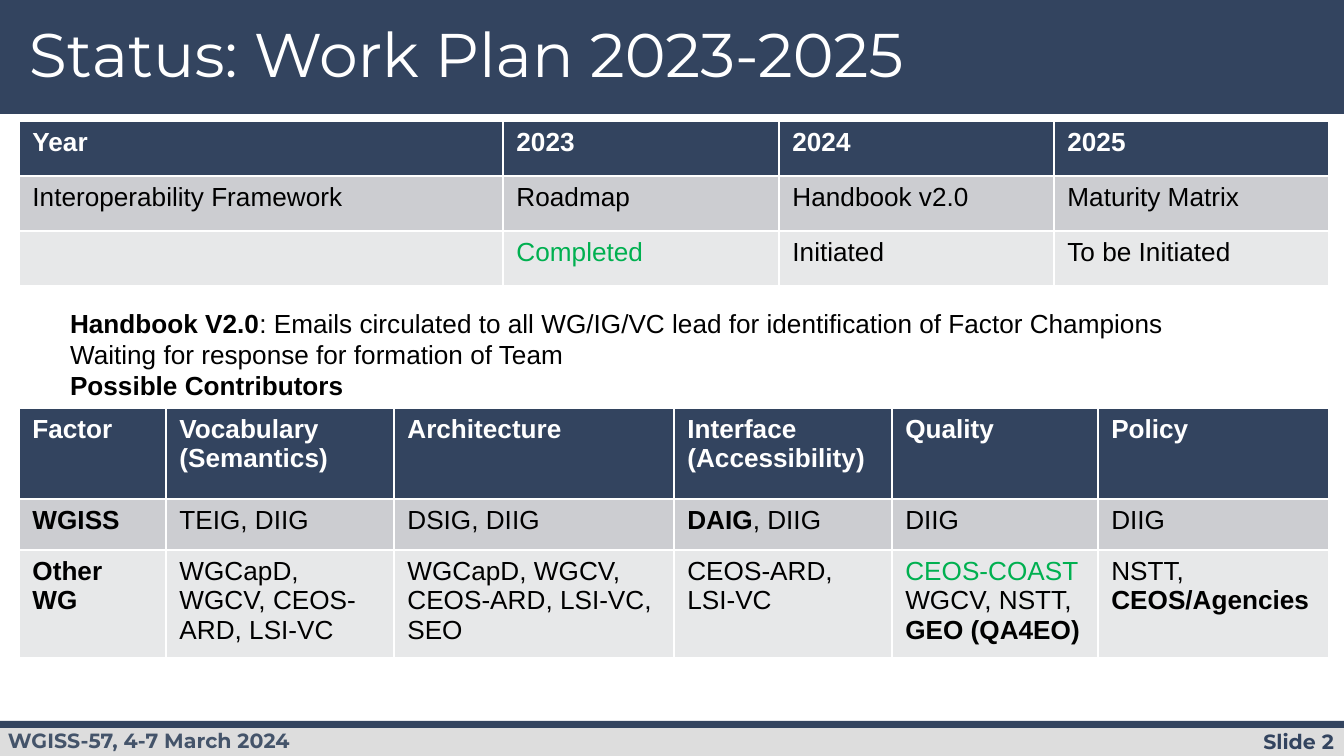
from pptx import Presentation
from pptx.dml.color import RGBColor
from pptx.enum.shapes import MSO_SHAPE
from pptx.enum.text import MSO_ANCHOR, PP_ALIGN
from pptx.util import Emu, Pt

RECTANGLE = MSO_SHAPE.RECTANGLE
TOP = MSO_ANCHOR.TOP
LEFT, RIGHT = PP_ALIGN.LEFT, PP_ALIGN.RIGHT

NAVY = RGBColor(0x33, 0x44, 0x5F)
SLATE = RGBColor(0x44, 0x54, 0x6A)
FOOTER_GREY = RGBColor(0xDD, 0xDD, 0xDD)
BAND_DARK = RGBColor(0xCC, 0xCD, 0xD1)
BAND_LIGHT = RGBColor(0xE7, 0xE8, 0xE9)
GREEN = RGBColor(0x00, 0xB0, 0x50)
WHITE = RGBColor(0xFF, 0xFF, 0xFF)
BLACK = RGBColor(0x00, 0x00, 0x00)

WIDTH, HEIGHT = 1344, 756
HEADING_FONT, BODY_FONT = "Montserrat", "Arial"
HIGHLIGHTS = ("Completed", "CEOS-COAST")

YEAR_ROWS = [
    ["Year", "2023", "2024", "2025"],
    ["Interoperability Framework", "Roadmap", "Handbook v2.0", "Maturity Matrix"],
    ["", "Completed", "Initiated", "To be Initiated"],
]
FACTOR_ROWS = [
    ["Factor", "Vocabulary (Semantics)", "Architecture",
     "Interface (Accessibility)", "Quality", "Policy"],
    ["*WGISS*", "TEIG, DIIG", "DSIG, DIIG", "*DAIG*, DIIG", "DIIG", "DIIG"],
    ["*Other WG*", "WGCapD, WGCV, CEOS-ARD, LSI-VC",
     "WGCapD, WGCV, CEOS-ARD, LSI-VC, SEO", "CEOS-ARD, LSI-VC",
     "CEOS-COAST\nWGCV, NSTT, *GEO (QA4EO)*", "NSTT, *CEOS/Agencies*"],
]
HANDBOOK_NOTES = (
    "*Handbook V2.0*: Emails circulated to all WG/IG/VC lead for "
    "identification of Factor Champions\n"
    "Waiting for response for formation of Team\n"
    "*Possible Contributors*"
)


def px(length):
    """Turn pixels into EMU."""
    return Emu(round(length * 914400 / 134.4))


def set_font(font, name, size, color, bold=False):
    """Format a font."""
    font.name, font.size, font.bold = name, Pt(size), bold
    font.color.rgb = color


def set_insets(frame, horizontal, vertical):
    """Set the inner margins of a text frame."""
    frame.margin_left = frame.margin_right = px(horizontal)
    frame.margin_top = frame.margin_bottom = px(vertical)


def write_body(frame, text, color=BLACK, bold=False):
    """Write lines of body text, with words between asterisks in bold."""
    for index, line in enumerate(text.split("\n")):
        paragraph = frame.paragraphs[0] if index == 0 else frame.add_paragraph()
        line_color = GREEN if line in HIGHLIGHTS else color
        set_font(paragraph.font, BODY_FONT, 14, line_color, bold)
        for part, words in enumerate(line.split("*")):
            if words:
                run = paragraph.add_run()
                run.text = words
                if part % 2:
                    run.font.bold = True


def add_bar(slide, box, color):
    """Add a plain filled bar behind the other shapes."""
    bar = slide.shapes.add_shape(RECTANGLE, *map(px, box))
    bar.shadow.inherit = False
    bar.fill.solid()
    bar.fill.fore_color.rgb = color
    bar.line.fill.background()
    return bar


def add_text_box(slide, box, insets):
    """Add a wrapping text box and return its text frame."""
    frame = slide.shapes.add_textbox(*map(px, box)).text_frame
    frame.word_wrap = True
    set_insets(frame, *insets)
    return frame


def add_header(slide, box):
    """Add the title band and place the title in it."""
    left, top, width, height = box
    bar = add_bar(slide, box, NAVY)
    title = slide.shapes.title
    bar._element.addnext(title._element)
    title.left, title.top = px(left + 19), px(top + 19)
    title.width, title.height = px(width - 309), px(height - 28)
    frame = title.text_frame
    frame.text = "Status: Work Plan 2023-2025"
    frame.vertical_anchor = TOP
    set_insets(frame, 10, 5)
    paragraph = frame.paragraphs[0]
    paragraph.alignment = LEFT
    paragraph.line_spacing = 0.9
    set_font(paragraph.font, HEADING_FONT, 33, WHITE)


def add_footer(slide, box):
    """Add the footer bar with the meeting name and slide number."""
    left, top, width, height = box
    add_bar(slide, box, FOOTER_GREY)
    add_bar(slide, (left, top - 4, width, 7), NAVY)
    labels = [
        ("WGISS-57, 4-7 March 2024", (left - 5, top - 9, 425, 52), (13, 13), SLATE, LEFT),
        ("Slide 2", (left + width - 212, top - 1, 212, 35), (10, 5), NAVY, RIGHT),
    ]
    for text, label_box, insets, color, alignment in labels:
        frame = add_text_box(slide, label_box, insets)
        paragraph = frame.paragraphs[0]
        paragraph.text = text
        paragraph.alignment = alignment
        set_font(paragraph.font, HEADING_FONT, 11, color, True)


def add_plan_table(slide, origin, column_widths, row_heights, rows):
    """Add a table with a navy header row and grey body rows."""
    size = sum(column_widths), sum(row_heights)
    table = slide.shapes.add_table(
        len(rows), len(column_widths), *map(px, origin + size)).table
    for column, width in zip(table.columns, column_widths):
        column.width = px(width)
    for row, height in zip(table.rows, row_heights):
        row.height = px(height)
    row_fills = NAVY, BAND_DARK, BAND_LIGHT
    for row_index, (texts, fill) in enumerate(zip(rows, row_fills)):
        is_header = row_index == 0
        for column_index, text in enumerate(texts):
            cell = table.cell(row_index, column_index)
            cell.fill.solid()
            cell.fill.fore_color.rgb = fill
            write_body(cell.text_frame, text, WHITE if is_header else BLACK, is_header)


def add_notes(slide, box):
    """Add the handbook notes between the tables."""
    write_body(add_text_box(slide, box, (13, 7)), HANDBOOK_NOTES)


def main():
    """Build and save the work plan slide."""
    presentation = Presentation()
    presentation.slide_width, presentation.slide_height = px(WIDTH), px(HEIGHT)
    slide = presentation.slides.add_slide(presentation.slide_layouts[5])
    add_header(slide, (0, 0, WIDTH, 114))
    add_footer(slide, (0, 725, WIDTH, 31))
    add_plan_table(slide, (19, 121), (484, 276, 275, 275), (55, 55, 55), YEAR_ROWS)
    add_notes(slide, (57, 300, 1287, 109))
    add_plan_table(slide, (19, 408), (147, 228, 280, 218, 206, 231),
                   (91, 51, 108), FACTOR_ROWS)
    presentation.save("out.pptx")


if __name__ == "__main__":
    main()
